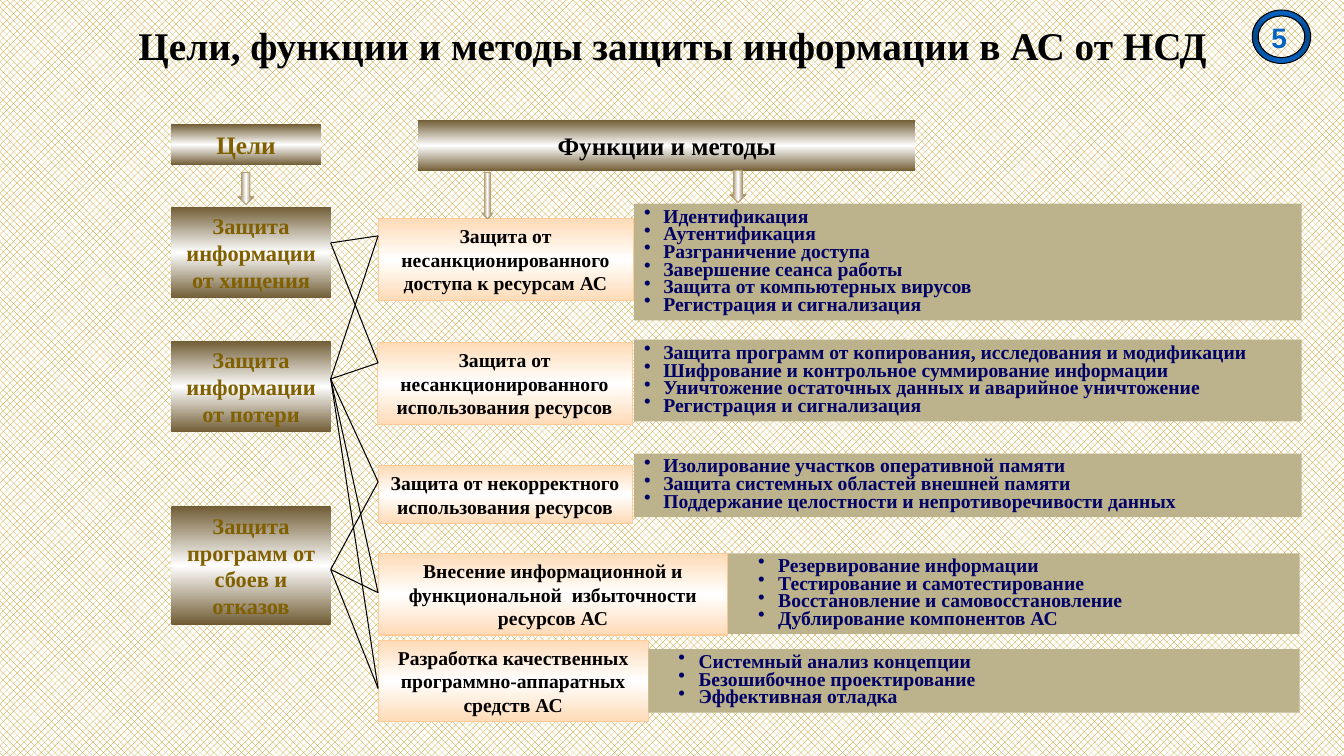
from copy import deepcopy

from lxml import etree
from pptx import Presentation
from pptx.dml.color import RGBColor
from pptx.enum.dml import MSO_PATTERN
from pptx.enum.shapes import MSO_CONNECTOR, MSO_SHAPE
from pptx.enum.text import MSO_ANCHOR, MSO_AUTO_SIZE, PP_ALIGN
from pptx.oxml.ns import qn
from pptx.util import Inches, Pt

RECT, ARROW, DONUT = MSO_SHAPE.RECTANGLE, MSO_SHAPE.DOWN_ARROW, MSO_SHAPE.DONUT
STRAIGHT = MSO_CONNECTOR.STRAIGHT
CENTER, JUSTIFY, LEFT = PP_ALIGN.CENTER, PP_ALIGN.JUSTIFY, PP_ALIGN.LEFT
MIDDLE, TOP = MSO_ANCHOR.MIDDLE, MSO_ANCHOR.TOP

BLACK = RGBColor(0x00, 0x00, 0x00)
WHITE = RGBColor(0xFF, 0xFF, 0xFF)
GOLD = RGBColor(0xBF, 0x90, 0x00)
BRONZE = RGBColor(0x70, 0x5C, 0x34)
OLIVE = RGBColor(0x80, 0x60, 0x00)
PEACH = RGBColor(0xFF, 0xDB, 0xB7)
PEACH_EDGE = RGBColor(0xFF, 0xCC, 0x99)
SAND = RGBColor(0xBC, 0xB2, 0x8C)
ARROW_EDGE = RGBColor(0xBA, 0xA0, 0x6C)
NAVY = RGBColor(0x00, 0x00, 0x66)
BLUE = RGBColor(0x05, 0x63, 0xC1)
DARK_BLUE = RGBColor(0x04, 0x47, 0x8A)
SERIF = "Times New Roman"

# Content: boxes are (left, top, width, height) in inches
TITLE = "Цели, функции и методы защиты информации в АС от НСД"
PAGE_NUMBER = "5"
HEADERS = [
    ("Цели", (1.7, 1.23, 1.48, 0.41), OLIVE),
    ("Функции и методы", (4.15, 1.19, 4.93, 0.51), BLACK),
]
# Text, box, height where the links start
GOALS = [
    ("Защита информации от хищения", (1.7, 2.05, 1.58, 0.91), 2.41),
    ("Защита информации от потери", (1.7, 3.38, 1.58, 0.91), 3.76),
    ("Защита программ от сбоев и отказов", (1.7, 5.02, 1.58, 1.18), 5.65),
]
# Function, box, height where the links end, methods, box, text indent, hanging
FUNCTIONS = [
    ("Защита от несанкционированного доступа к ресурсам АС",
     (3.75, 2.17, 2.53, 0.81), 2.34,
     ["Идентификация", "Аутентификация", "Разграничение доступа",
      "Завершение сеанса работы", "Защита от компьютерных вирусов",
      "Регистрация и сигнализация"],
     (6.29, 2.02, 6.62, 1.16), 0.19, 0.19),
    ("Защита от несанкционированного использования ресурсов",
     (3.74, 3.4, 2.53, 0.81), 3.6,
     ["Защита программ от копирования, исследования и модификации",
      "Шифрование и контрольное суммирование информации",
      "Уничтожение остаточных данных и аварийное уничтожение",
      "Регистрация и сигнализация"],
     (6.29, 3.37, 6.62, 0.81), 0.19, 0.19),
    ("Защита от некорректного использования ресурсов",
     (3.75, 4.62, 2.52, 0.57), 4.78,
     ["Изолирование участков оперативной памяти",
      "Защита системных областей внешней памяти",
      "Поддержание целостности и непротиворечивости данных"],
     (6.29, 4.5, 6.62, 0.63), 0.19, 0.19),
    ("Внесение информационной и функциональной  избыточности ресурсов АС",
     (3.75, 5.49, 3.47, 0.81), 5.88,
     ["Резервирование информации", "Тестирование и самотестирование",
      "Восстановление и самовосстановление", "Дублирование компонентов АС"],
     (7.22, 5.49, 5.67, 0.8), 0.4, 0.2),
    ("Разработка качественных программно-аппаратных средств АС",
     (3.75, 6.35, 2.68, 0.81), 6.83,
     ["Системный анализ концепции", "Безошибочное проектирование",
      "Эффективная отладка"],
     (6.43, 6.44, 6.46, 0.63), 0.4, 0.2),
]
LINKS = {0: (0, 1), 1: (0, 1, 2, 3, 4), 2: (2, 3, 4)}  # goal: functions
LINK_LEFT, LINK_RIGHT = 3.28, 3.75
ARROWS = [(2.36, 1.71, 0.16, 0.32), (4.78, 1.71, 0.11, 0.46),
          (7.24, 1.69, 0.16, 0.32)]
RING = (12.42, 0.1, 0.58, 0.53)


def add_box(kind, box, edge=None):
    sp = s.shapes.add_shape(kind, *map(Inches, box))
    sp.shadow.inherit = False
    if edge is None:
        sp.line.fill.background()
    else:
        sp.line.color.rgb = edge
        sp.line.width = Pt(0.75)
    return sp


def fill_gradient(sp, outer, middle=WHITE, angle=90):
    sp.fill.gradient()
    sp.fill.gradient_angle = angle
    stops = sp._element.spPr.find(qn("a:gradFill")).find(qn("a:gsLst"))
    stops.append(deepcopy(stops[0]))
    for stop, position, color in zip(sp.fill.gradient_stops, (0, 0.5, 1),
                                     (outer, middle, outer)):
        stop.position = position
        stop.color.rgb = color


def write(sp, lines, size, color, align=CENTER, anchor=MIDDLE, font=SERIF,
          wrap=True, spacing=None):
    tf = sp.text_frame
    tf.text = "\n".join(lines)
    tf.word_wrap = wrap
    tf.auto_size = MSO_AUTO_SIZE.NONE
    tf.vertical_anchor = anchor
    for p in tf.paragraphs:
        p.alignment = align
        p.line_spacing = spacing
        p.font.name = font
        p.font.size = Pt(size)
        p.font.bold = True
        p.font.color.rgb = color
    return tf


def add_bullets(tf, indent, hanging):
    for p in tf.paragraphs:
        pPr = p._p.get_or_add_pPr()
        pPr.set("marL", str(Inches(indent)))
        pPr.set("indent", str(-Inches(hanging)))
        bullet = etree.Element(qn("a:buChar"), char="•")
        pPr.find(qn("a:defRPr")).addprevious(bullet)


prs = Presentation()
prs.slide_width, prs.slide_height = Inches(13.33), Inches(7.5)
s = prs.slides.add_slide(prs.slide_layouts[5])

# Background
background = s.background.fill
background.patterned()
background.pattern = MSO_PATTERN.PERCENT_50
background.fore_color.rgb = GOLD
background.back_color.rgb = WHITE

# Title
title = s.shapes.title
title.left, title.top, title.width, title.height = map(
    Inches, (0.92, 0.2, 11.5, 0.57))
write(title, [TITLE], 28, BLACK, spacing=0.8)

# Column headers and goals
for text, box, color in HEADERS:
    sp = add_box(RECT, box)
    fill_gradient(sp, BRONZE)
    write(sp, [text], 18, color, wrap=False)
for text, box, _ in GOALS:
    sp = add_box(RECT, box)
    fill_gradient(sp, BRONZE)
    write(sp, [text], 16, OLIVE)

# Functions with their methods
for text, box, _, methods, methods_box, indent, hanging in FUNCTIONS:
    sp = add_box(RECT, box, PEACH_EDGE)
    fill_gradient(sp, PEACH)
    write(sp, [text], 14, BLACK)
    sp = add_box(RECT, methods_box)
    sp.fill.solid()
    sp.fill.fore_color.rgb = SAND
    tf = write(sp, methods, 14, NAVY, align=JUSTIFY, spacing=0.75)
    add_bullets(tf, indent, hanging)

# Links from goals to functions
for goal, targets in LINKS.items():
    for target in targets:
        link = s.shapes.add_connector(
            STRAIGHT, Inches(LINK_LEFT), Inches(GOALS[goal][2]),
            Inches(LINK_RIGHT), Inches(FUNCTIONS[target][2]))
        link.line.color.rgb = BLACK
        link.line.width = Pt(0.75)
        etree.SubElement(link._element.spPr, qn("a:effectLst"))

# Arrows under the headers
for box in ARROWS:
    fill_gradient(add_box(ARROW, box, ARROW_EDGE), BRONZE, angle=0)

# Page number in a ring
ring = add_box(DONUT, RING, BLACK)
ring.adjustments[0] = 0.11
fill_gradient(ring, BLUE, DARK_BLUE)
number = s.shapes.add_textbox(*map(Inches, (12.61, 0.2, 0.27, 0.34)))
tf = write(number, [PAGE_NUMBER], 20, BLUE, LEFT, TOP, "Arial")
tf.margin_left = tf.margin_right = tf.margin_top = tf.margin_bottom = 0

prs.save("out.pptx")
